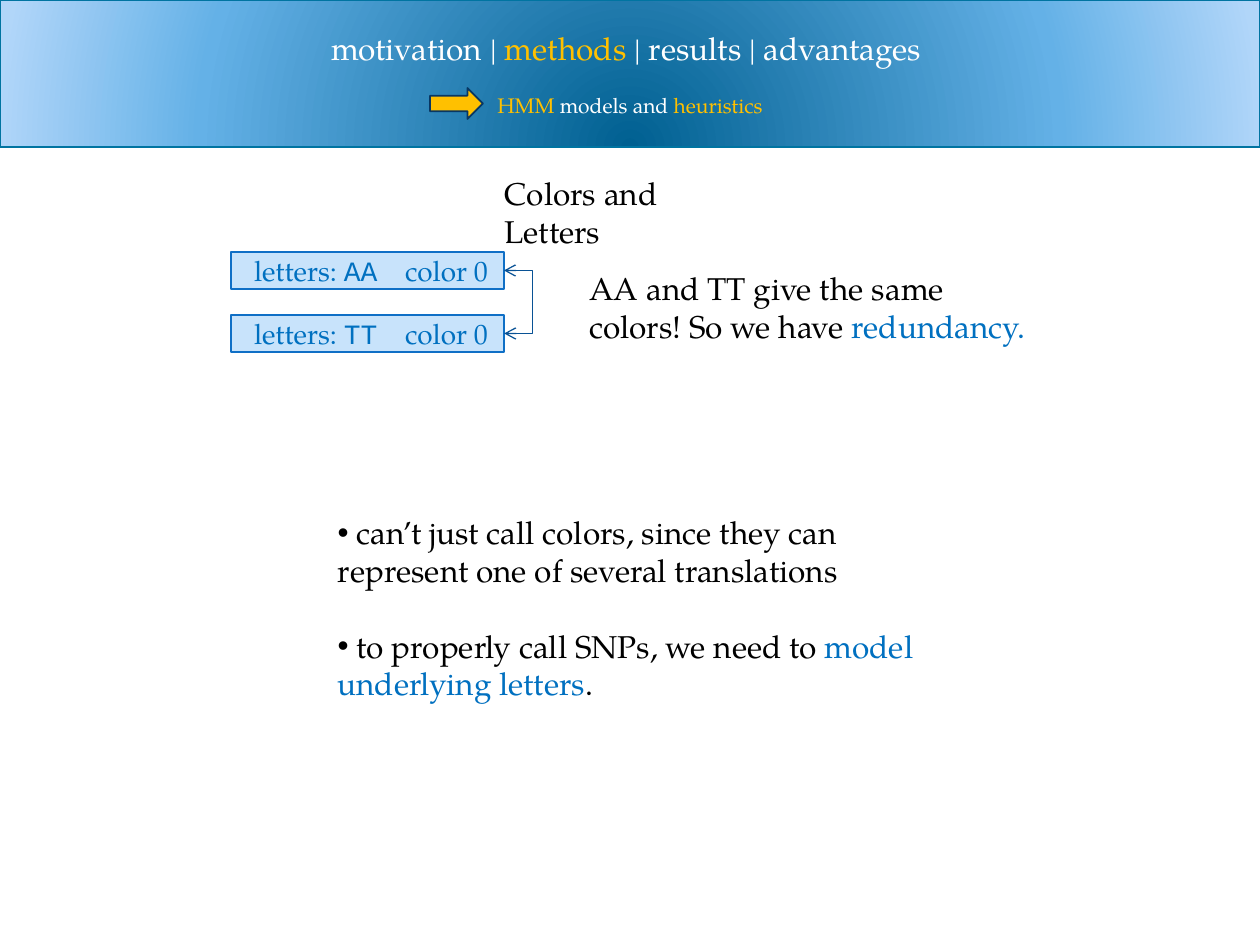
from dataclasses import dataclass
from typing import Optional, Sequence

import pptx
import pptx.dml.color
import pptx.enum.shapes
import pptx.enum.text
import pptx.oxml
import pptx.oxml.ns
import pptx.util

RGBColor = pptx.dml.color.RGBColor
MSO_SHAPE = pptx.enum.shapes.MSO_SHAPE
PP_ALIGN = pptx.enum.text.PP_ALIGN
MSO_ANCHOR = pptx.enum.text.MSO_ANCHOR

PIXELS_PER_INCH = 126
SERIF = "TeX Gyre Pagella"
MONO = "Courier New"

BLACK = RGBColor(0x00, 0x00, 0x00)
WHITE = RGBColor(0xFF, 0xFF, 0xFF)
GOLD = RGBColor(0xFF, 0xC0, 0x00)
BLUE = RGBColor(0x00, 0x70, 0xC0)
PALE_BLUE = RGBColor(0xC8, 0xE3, 0xFB)
BOX_LINE = RGBColor(0x0F, 0x6F, 0xC6)
LINK_LINE = RGBColor(0x09, 0x52, 0x95)
ARROW_LINE = RGBColor(0x08, 0x37, 0x63)
HEADER_LINE = RGBColor(0x00, 0x74, 0xA1)
# Gradient position in percent, then colour
HEADER_STOPS = (
    (0, RGBColor(0x00, 0x60, 0x91)),
    (68, RGBColor(0x64, 0xB1, 0xE7)),
    (100, RGBColor(0xB1, 0xD6, 0xF9)),
)


@dataclass(frozen=True)
class Box:
    left: int
    top: int
    width: int
    height: int


@dataclass(frozen=True)
class Span:
    text: str
    color: RGBColor
    font: str = SERIF


@dataclass(frozen=True)
class LetterPair:
    letters: str
    top: int


def px(length: int) -> pptx.util.Emu:
    return pptx.util.Emu(round(length * 914400 / PIXELS_PER_INCH))


def xml(tag: str, content: str = "", **attributes: object):
    """Make one DrawingML element."""
    listed = "".join(f' {name}="{value}"' for name, value in attributes.items())
    namespace = pptx.oxml.ns.nsdecls("a")
    return pptx.oxml.parse_xml(f"<a:{tag} {namespace}{listed}>{content}</a:{tag}>")


def place(shape, box: Box) -> None:
    shape.left, shape.top = px(box.left), px(box.top)
    shape.width, shape.height = px(box.width), px(box.height)


def write(paragraph, spans: Sequence[Span], size: int,
          alignment=PP_ALIGN.LEFT, space_before: float = 0) -> None:
    paragraph.alignment = alignment
    paragraph.space_before = pptx.util.Pt(space_before)
    for span in spans:
        run = paragraph.add_run()
        run.text = span.text
        run.font.name = span.font
        run.font.size = pptx.util.Pt(size)
        run.font.color.rgb = span.color


def prepare_frame(shape, anchor):
    frame = shape.text_frame
    frame.word_wrap = True
    frame.auto_size = pptx.enum.text.MSO_AUTO_SIZE.NONE
    frame.vertical_anchor = anchor
    return frame


def add_shape(slide, kind, box: Box, fill: Optional[RGBColor],
              line: RGBColor, line_width: float):
    shape = slide.shapes.add_shape(
        kind, px(box.left), px(box.top), px(box.width), px(box.height))
    shape.shadow.inherit = False
    if fill is not None:
        shape.fill.solid()
        shape.fill.fore_color.rgb = fill
    shape.line.color.rgb = line
    shape.line.width = pptx.util.Pt(line_width)
    return shape


def add_header(slide) -> None:
    header = add_shape(slide, MSO_SHAPE.RECTANGLE, Box(0, 0, 1260, 147),
                       None, HEADER_LINE, 0.75)
    stops = "".join(
        f'<a:gs pos="{position * 1000}"><a:srgbClr val="{color}"/></a:gs>'
        for position, color in HEADER_STOPS)
    gradient = xml("gradFill", f'<a:gsLst>{stops}</a:gsLst><a:path path="circle">'
                   '<a:fillToRect l="50000" t="130000" r="50000" b="-30000"/></a:path>')
    header._element.spPr.find(pptx.oxml.ns.qn("a:prstGeom")).addnext(gradient)

    frame = prepare_frame(header, MSO_ANCHOR.MIDDLE)
    write(frame.paragraphs[0],
          [Span("motivation | ", WHITE), Span("methods", GOLD),
           Span(" | results | advantages ", WHITE)], 18, PP_ALIGN.CENTER)
    write(frame.add_paragraph(),
          [Span("HMM ", GOLD), Span("models and ", WHITE), Span("heuristics", GOLD)],
          12, PP_ALIGN.CENTER, space_before=14.4)


def add_letter_box(slide, pair: LetterPair):
    shape = add_shape(slide, MSO_SHAPE.RECTANGLE, Box(231, pair.top, 273, 37),
                      PALE_BLUE, BOX_LINE, 1)
    frame = prepare_frame(shape, MSO_ANCHOR.MIDDLE)
    frame.margin_left, frame.margin_right = px(23), 0
    paragraph = frame.paragraphs[0]
    write(paragraph, [Span("letters: ", BLUE), Span(pair.letters, BLUE, MONO),
                      Span("\tcolor 0", BLUE)], 16)
    paragraph._p.get_or_add_pPr().append(
        xml("tabLst", f'<a:tab pos="{px(151)}" algn="l"/>'))
    return shape


def add_link(slide, first, second) -> None:
    """Join the right sides of two boxes with a double-headed elbow."""
    # Starting at the joints keeps the elbow unflipped, so it bends to the right
    ends = [(box.left + box.width, box.top + box.height // 2)
            for box in (first, second)]
    link = slide.shapes.add_connector(
        pptx.enum.shapes.MSO_CONNECTOR.ELBOW, *ends[0], *ends[1])
    link.begin_connect(first, 3)
    link.end_connect(second, 3)
    # The bend is a multiple of the width, so the width must not be zero
    link.width = pptx.util.Emu(1588)
    link.line.color.rgb = LINK_LINE
    link.line.width = pptx.util.Pt(0.75)
    properties = link._element.spPr
    guides = properties.find(pptx.oxml.ns.qn("a:prstGeom")).get_or_add_avLst()
    guides.append(xml("gd", name="adj1", fmla="val 14400000"))
    for end in ("headEnd", "tailEnd"):
        link.line._get_or_add_ln().append(xml(end, type="arrow"))
    properties.append(xml("effectLst"))


def add_bullet(paragraph, spans: Sequence[Span], space_before: float) -> None:
    write(paragraph, spans, 18, space_before=space_before)
    properties = paragraph._p.get_or_add_pPr()
    properties.set("marL", "0")
    properties.set("indent", "0")
    properties.append(xml("buFont", typeface="Arial"))
    properties.append(xml("buChar", char="•"))


def main() -> None:
    presentation = pptx.Presentation()
    presentation.slide_width, presentation.slide_height = px(1260), px(945)
    slide = presentation.slides.add_slide(presentation.slide_layouts[1])

    # Title
    title = slide.shapes.title
    place(title, Box(492, 168, 276, 84))
    write(prepare_frame(title, MSO_ANCHOR.TOP).paragraphs[0],
          [Span("Colors and Letters", BLACK)], 18)

    # Conclusions
    body = slide.placeholders[1]
    place(body, Box(325, 507, 609, 204))
    frame = prepare_frame(body, MSO_ANCHOR.TOP)
    add_bullet(frame.paragraphs[0], [Span(
        " can’t just call colors, since they can represent one of several translations",
        BLACK)], 0)
    add_bullet(frame.add_paragraph(), [
        Span(" to properly call SNPs, we need to ", BLACK),
        Span("model underlying letters", BLUE), Span(".", BLACK)], 21.6)

    # Letter pairs that share a color
    pairs = [LetterPair("AA", 252), LetterPair("TT", 315)]
    first, second = [add_letter_box(slide, pair) for pair in pairs]
    add_link(slide, first, second)

    # Remark beside the pairs
    remark = slide.shapes.add_textbox(px(577), px(263), px(462), px(89))
    write(prepare_frame(remark, MSO_ANCHOR.TOP).paragraphs[0],
          [Span("AA and TT give the same colors! So we have ", BLACK),
           Span("redundancy.", BLUE)], 18)

    # Header with its pointer
    add_header(slide)
    add_shape(slide, MSO_SHAPE.RIGHT_ARROW, Box(430, 88, 53, 31), GOLD, ARROW_LINE, 1)

    presentation.save("out.pptx")


if __name__ == "__main__":
    main()
